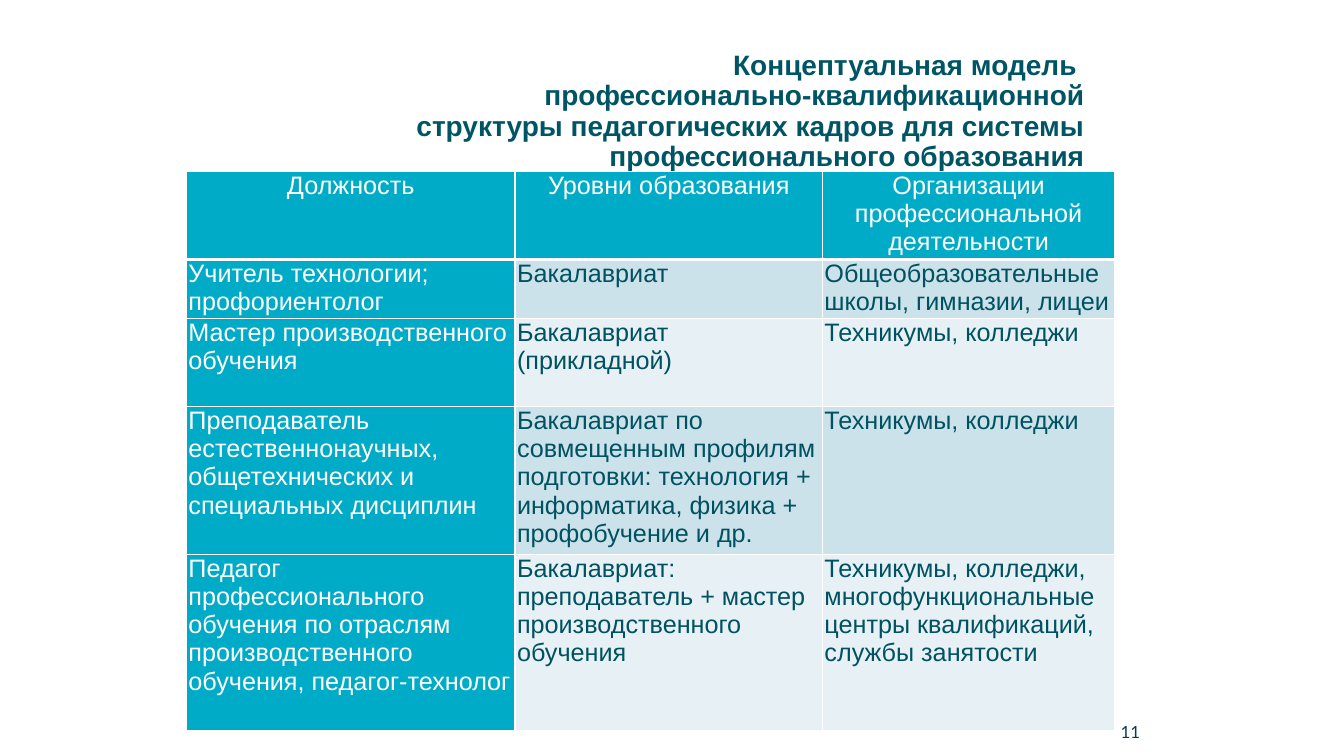
"""Build the slide on the qualification structure of teaching staff."""
from lxml.etree import SubElement
from pptx import Presentation
from pptx.dml.color import RGBColor
from pptx.enum.text import MSO_ANCHOR, MSO_AUTO_SIZE, PP_ALIGN
from pptx.oxml.ns import qn
from pptx.util import Inches, Pt

GRID_UNIT = Inches(7.5) // 90
COLORS = {
    "title": "005564",
    "accent": "00ABC7",
    "body": "005260",
    "band_dark": "CCE2EB",
    "band_light": "E7F1F5",
    "white": "FFFFFF",
    "number": "023F47",
}
TITLE = (
    "Концептуальная модель \v"
    "профессионально-квалификационной структуры педагогических кадров "
    "для системы профессионального образования"
)
COLUMN_WIDTHS = [39.12, 36.6, 34.8]
ROW_HEIGHTS = [10.5, 7, 10.5, 17.6, 21]
STAFF_ROWS = [
    ["Должность", "Уровни образования", "Организации профессиональной деятельности"],
    [
        "Учитель технологии; профориентолог",
        "Бакалавриат",
        "Общеобразовательные школы, гимназии, лицеи",
    ],
    [
        "Мастер производственного обучения",
        "Бакалавриат (прикладной)",
        "Техникумы, колледжи",
    ],
    [
        "Преподаватель естественнонаучных, общетехнических и специальных дисциплин",
        "Бакалавриат по совмещенным профилям подготовки: технология + "
        "информатика, физика + профобучение и др.",
        "Техникумы, колледжи",
    ],
    [
        "Педагог профессионального обучения по отраслям производственного "
        "обучения, педагог-технолог",
        "Бакалавриат: преподаватель + мастер производственного обучения",
        "Техникумы, колледжи, многофункциональные центры квалификаций, "
        "службы занятости",
    ],
]


def grid(units):
    """Convert units of the 160 by 90 slide grid to a length."""
    return round(units * GRID_UNIT)


def color(name):
    """Return a named colour."""
    return RGBColor.from_string(COLORS[name])


def format_paragraph(paragraph, font_name, size, color_name, alignment, bold=False):
    """Set the font and alignment of a paragraph."""
    paragraph.alignment = alignment
    font = paragraph.font
    font.name, font.size, font.bold = font_name, Pt(size), bold
    font.color.rgb = color(color_name)


def add_title(slide):
    """Place and format the title placeholder."""
    title = slide.shapes.title
    title.left, title.top = grid(46.44), grid(1.92)
    title.width, title.height = grid(83.88), grid(19.2)
    frame = title.text_frame
    frame.text = TITLE
    frame.word_wrap = True
    frame.auto_size = MSO_AUTO_SIZE.NONE
    frame.vertical_anchor = MSO_ANCHOR.BOTTOM
    paragraph = frame.paragraphs[0]
    paragraph.line_spacing = 0.9
    format_paragraph(paragraph, "Arial", 20, "title", PP_ALIGN.RIGHT, bold=True)


def add_borders(cell, bottom_width):
    """Draw white lines around a cell."""
    properties = cell._tc.get_or_add_tcPr()
    for side, width in (("L", 1), ("R", 1), ("T", 1), ("B", bottom_width)):
        line = SubElement(properties, qn(f"a:ln{side}"), w=str(Pt(width)))
        fill = SubElement(line, qn("a:solidFill"))
        SubElement(fill, qn("a:srgbClr"), val=COLORS["white"])


def format_cell(cell, row, column):
    """Colour a cell according to its place in the table."""
    is_header = row == 0
    is_accent = is_header or column == 0
    band = "band_dark" if row % 2 else "band_light"
    add_borders(cell, 3 if is_header else 1)
    cell.fill.solid()
    cell.fill.fore_color.rgb = color("accent" if is_accent else band)
    cell.margin_left = cell.margin_right = Inches(0.02)
    cell.margin_top = cell.margin_bottom = 0
    format_paragraph(
        cell.text_frame.paragraphs[0],
        "Arial",
        18,
        "white" if is_accent else "body",
        PP_ALIGN.CENTER if is_header else PP_ALIGN.LEFT,
    )


def add_staff_table(slide):
    """Add the table of positions, education levels and organisations."""
    table = slide.shapes.add_table(
        len(ROW_HEIGHTS), len(COLUMN_WIDTHS), grid(22.2), grid(20.4),
        grid(sum(COLUMN_WIDTHS)), grid(sum(ROW_HEIGHTS)),
    ).table
    table.first_col = True
    for column, width in zip(table.columns, COLUMN_WIDTHS):
        column.width = grid(width)
    for row, height in zip(table.rows, ROW_HEIGHTS):
        row.height = grid(height)
    for row, texts in enumerate(STAFF_ROWS):
        for column, text in enumerate(texts):
            cell = table.cell(row, column)
            cell.text = text
            format_cell(cell, row, column)


def add_slide_number(slide):
    """Add the slide number in the lower right corner."""
    box = slide.shapes.add_textbox(grid(130.2), grid(85.3), grid(6.72), grid(3.5))
    frame = box.text_frame
    frame.word_wrap = True
    frame.text = "11"
    format_paragraph(frame.paragraphs[0], "Lato", 12, "number", PP_ALIGN.RIGHT)


def main():
    """Build and save the presentation."""
    presentation = Presentation()
    presentation.slide_width = grid(160)
    presentation.slide_height = grid(90)
    slide = presentation.slides.add_slide(presentation.slide_layouts[5])
    add_title(slide)
    add_staff_table(slide)
    add_slide_number(slide)
    presentation.save("out.pptx")


if __name__ == "__main__":
    main()
